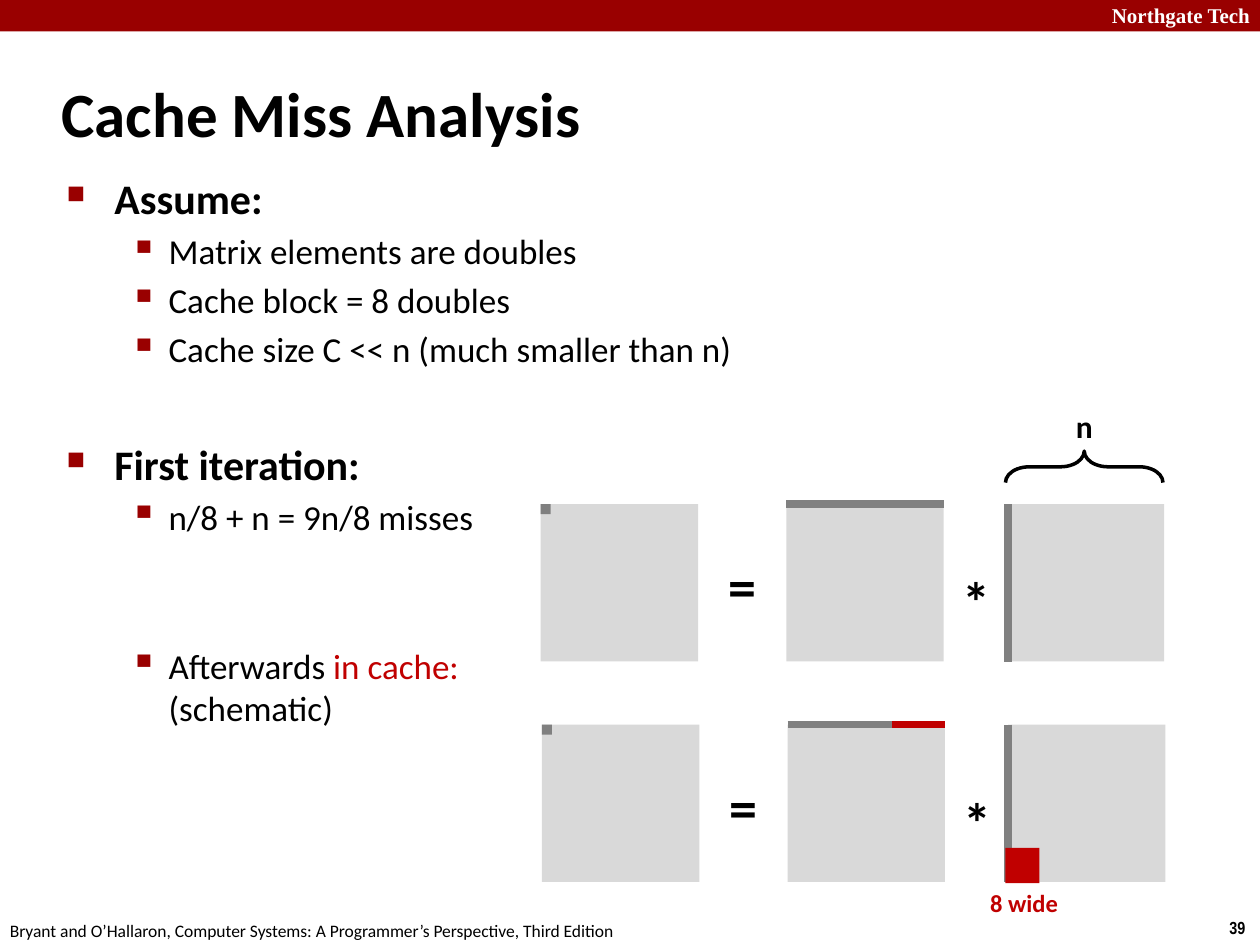
"""Build the cache miss analysis slide."""
from lxml import etree
from pptx import Presentation
from pptx.dml.color import RGBColor
from pptx.enum.shapes import MSO_CONNECTOR, MSO_SHAPE
from pptx.enum.text import MSO_ANCHOR, PP_ALIGN
from pptx.oxml.ns import qn
from pptx.util import Inches, Pt

RECTANGLE, BRACE = MSO_SHAPE.RECTANGLE, MSO_SHAPE.LEFT_BRACE
STRAIGHT = MSO_CONNECTOR.STRAIGHT
MIDDLE, RIGHT = MSO_ANCHOR.MIDDLE, PP_ALIGN.RIGHT

BLACK, WHITE, MAROON, RED = "000000", "FFFFFF", "990000", "C00000"
LIGHT, DARK = "D9D9D9", "808080"

BODY = [
    (0, 4.8, [("Assume:", BLACK)]),
    (1, 4, [("Matrix elements are doubles", BLACK)]),
    (1, 4, [("Cache block = 8 doubles", BLACK)]),
    (1, 4, [("Cache size C << n (much smaller than n)", BLACK)]),
    (0, 39, [("First iteration:", BLACK)]),
    (1, 4, [("n/8 + n = 9n/8 misses", BLACK)]),
    (1, 61, [("Afterwards ", BLACK), ("in cache:", RED), ("\n", RED), ("(schematic)", BLACK)]),
]
LEVELS = [
    {"size": 24, "bold": True, "margin": 0.38, "hang": 0.38, "bullet": "■", "percent": 60},
    {"size": 20, "bold": False, "margin": 0.81, "hang": 0.31, "bullet": "▪", "percent": 110},
]
LABELS = [
    ("Northgate Tech", (8.59, -0.03, 1.43, 0.3), 12, WHITE, True, "Times New Roman"),
    ("39", (9.66, 7.23, 0.34, 0.27), 10, BLACK, True, "Arial Narrow"),
    ("Bryant and O’Hallaron, Computer Systems: A Programmer’s Perspective, Third Edition",
     (-0.02, 7.25, 5.08, 0.27), 10, BLACK, False, "Calibri"),
    ("n", (8.44, 3.18, 0.34, 0.4), 18, BLACK, True, "Calibri"),
    ("8 wide", (7.76, 7, 0.74, 0.34), 14, RED, True, "Calibri"),
]
SIDE = 1.25
MATRIX_LEFTS = (4.29, 6.24, 7.99)
ROWS = [(0, 4), (0.01, 5.75)]
OPERATORS = [("=", 5.68, 0.33), ("*", 7.54, 0.45)]


def color(value):
    return RGBColor.from_string(value)


def add_span(para, text, size, tint, bold, font="Calibri"):
    span = para.add_run()
    span.text = text
    span.font.name, span.font.size, span.font.bold = font, Pt(size), bold
    span.font.color.rgb = color(tint)


def add_box(page, place, wrap=False):
    box = page.shapes.add_textbox(*map(Inches, place))
    box.text_frame.word_wrap = wrap
    return box.text_frame


def add_label(page, text, place, size, tint=BLACK, bold=True, font="Calibri"):
    frame = add_box(page, place)
    add_span(frame.paragraphs[0], text, size, tint, bold, font)
    return frame


def add_block(page, place, fill):
    block = page.shapes.add_shape(RECTANGLE, *map(Inches, place))
    block.shadow.inherit = False
    block.fill.solid()
    block.fill.fore_color.rgb = color(fill)
    block.line.fill.background()


def add_strip(page, ends, tint):
    strip = page.shapes.add_connector(STRAIGHT, *map(Inches, ends))
    strip.line.color.rgb = color(tint)
    strip.line.width = Pt(4.5)
    etree.SubElement(strip._element.spPr, qn("a:effectLst"))


def add_bullet(para, level):
    props = para._p.get_or_add_pPr()
    props.set("marL", str(Inches(level["margin"])))
    props.set("indent", str(-Inches(level["hang"])))
    tint = etree.SubElement(props, qn("a:buClr"))
    etree.SubElement(tint, qn("a:srgbClr")).set("val", MAROON)
    etree.SubElement(props, qn("a:buSzPct")).set("val", str(level["percent"] * 1000))
    etree.SubElement(props, qn("a:buChar")).set("char", level["bullet"])


def add_body(page):
    frame = add_box(page, (0.43, 1.32, 8.64, 3.34), wrap=True)
    for index, (depth, gap, spans) in enumerate(BODY):
        para = frame.add_paragraph() if index else frame.paragraphs[0]
        level = LEVELS[depth]
        para.level, para.space_before = depth, Pt(gap)
        add_bullet(para, level)
        for text, tint in spans:
            if text == "\n":
                para.add_line_break()
            else:
                add_span(para, text, level["size"], tint, level["bold"])


def add_product(page, shift, top):
    result, first, second = (left + shift for left in MATRIX_LEFTS)
    for left in (result, first, second):
        add_block(page, (left, top, SIDE, SIDE), LIGHT)
    add_block(page, (result, top, 0.08, 0.08), DARK)
    add_strip(page, (first, top, first + SIDE, top), DARK)
    add_strip(page, (8, top, 8, top + SIDE), DARK)
    for sign, left, drop in OPERATORS:
        add_label(page, sign, (left + shift, top + drop, 0.43, 0.64), 32)


def add_brace(page):
    brace = page.shapes.add_shape(BRACE, *map(Inches, (8.48, 3.08, 0.25, SIDE)))
    brace.shadow.inherit = False
    brace.rotation = 90
    brace.adjustments[0], brace.adjustments[1] = 0.75, 0.5
    brace.fill.background()
    brace.line.color.rgb = color(BLACK)
    brace.line.width = Pt(2)


def main():
    deck = Presentation()
    deck.slide_width, deck.slide_height = Inches(10), Inches(7.5)
    page = deck.slides.add_slide(deck.slide_layouts[6])
    add_block(page, (0, 0, 10, 0.25), MAROON)
    title = add_label(page, "Cache Miss Analysis", (0.39, 0.48, 8.3, 0.83), 36)
    title.word_wrap, title.vertical_anchor = True, MIDDLE
    add_body(page)
    for shift, top in ROWS:
        add_product(page, shift, top)
    add_strip(page, (7.08, 5.75, 7.5, 5.75), RED)
    add_block(page, (7.98, 6.73, 0.27, 0.28), RED)
    add_brace(page)
    frames = [add_label(page, *label) for label in LABELS]
    frames[0].word_wrap = True
    frames[0].paragraphs[0].alignment = RIGHT
    deck.save("out.pptx")


if __name__ == "__main__":
    main()
